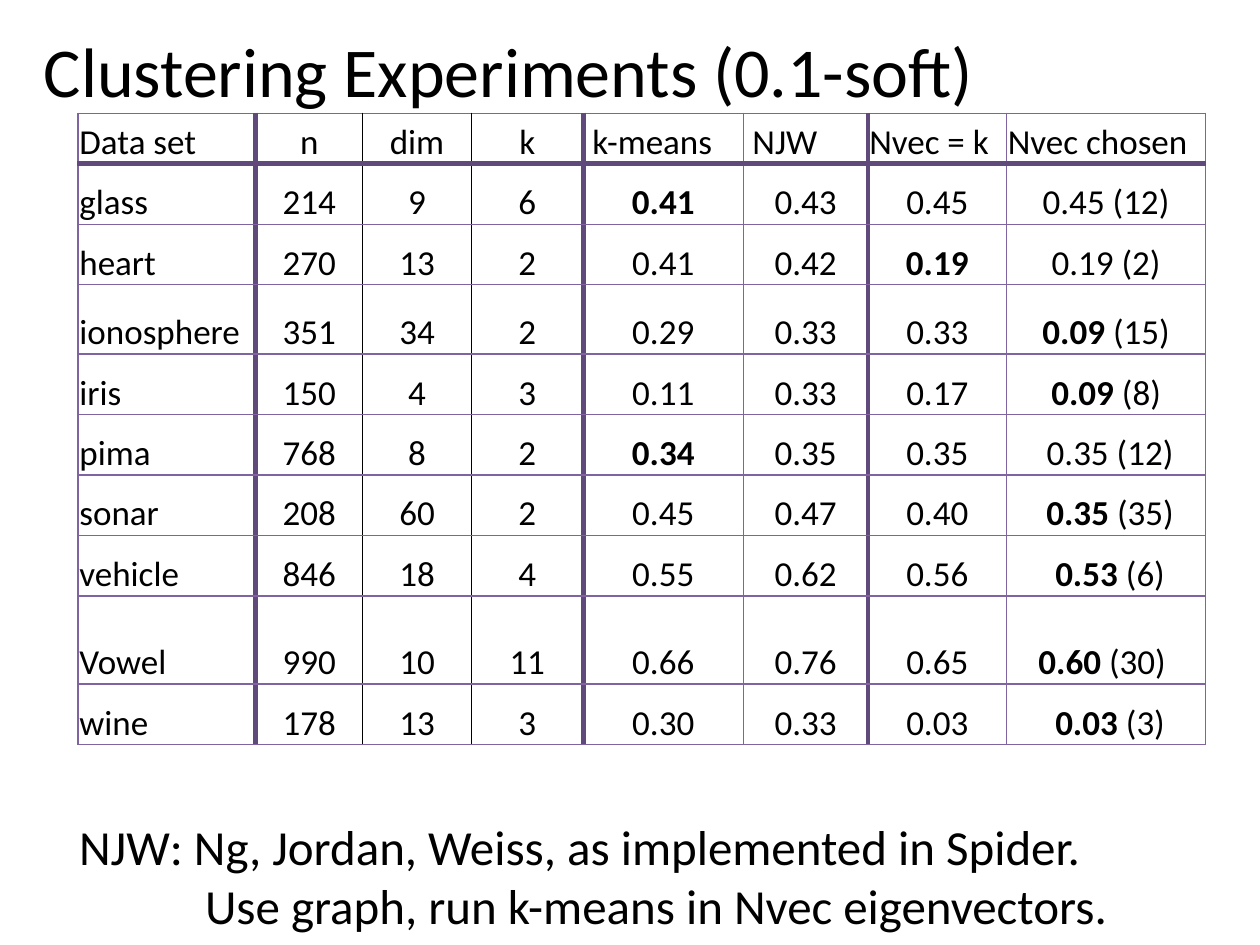
from lxml import etree
from pptx import Presentation
from pptx.dml.color import RGBColor
from pptx.enum.text import MSO_ANCHOR as Anchor, PP_ALIGN as Align
from pptx.oxml.ns import qn
from pptx.util import Inches, Pt

FONT = "Calibri"
COLORS = {"text": "000000", "purple": "8064A2", "dark purple": "604A7B"}
THIN, THICK, HAIR = ("purple", 1), ("dark purple", 3), ("text", 0.5)

COLUMN_WIDTHS = [1.41, 0.85, 0.86, 0.89, 1.27, 0.99, 1.1, 1.58]
ROW_HEIGHTS = [0.4, 0.48, 0.48, 0.55, 0.48, 0.48, 0.48, 0.48, 0.7, 0.48]
# Rules from the left edge to the right, and from the top edge to the bottom
VERTICAL_RULES = [THIN, THICK, HAIR, HAIR, THICK, THIN, THICK, THIN, THIN]
HORIZONTAL_RULES = [THIN, THICK] + [THIN] * 9

# Asterisks enclose bold text
RESULTS = [
    ["Data set", "n", "dim", "k", " k-means", " NJW", "Nvec = k", "Nvec chosen"],
    ["glass", "214", "9", "6", "*0.41*", "0.43", "0.45", "0.45 (12)"],
    ["heart", "270", "13", "2", "0.41", "0.42", "*0.19*", "0.19 (2)"],
    ["ionosphere", "351", "34", "2", "0.29", "0.33", "0.33", "* 0.09 *(15) "],
    ["iris", "150", "4", "3", "0.11", "0.33", "0.17", "*0.09* (8)"],
    ["pima", "768", "8", "2", "*0.34*", "0.35", "0.35", " 0.35 (12)"],
    ["sonar", "208", "60", "2", "0.45", "0.47", "0.40", "* 0.35 *(35)"],
    ["vehicle", "846", "18", "4", "0.55", "0.62", "0.56", " *0.53* (6)"],
    ["Vowel", "990", "10", "11", "0.66", "0.76", "0.65", "*0.60 *(30) "],
    ["wine", "178", "13", "3", "0.30", "0.33", "0.03", " *0.03* (3)"],
]


def set_font(paragraph, size):
    paragraph.font.name = FONT
    paragraph.font.size = Pt(size)
    paragraph.font.color.rgb = RGBColor.from_string(COLORS["text"])


def add_text(slide, left, top, width, height, lines, size):
    """Add a text box of (text, left indent in inches) lines."""
    box = slide.shapes.add_textbox(Inches(left), Inches(top), Inches(width), Inches(height))
    frame = box.text_frame
    frame.word_wrap = False
    for index, (text, indent) in enumerate(lines):
        paragraph = frame.add_paragraph() if index else frame.paragraphs[0]
        paragraph.text = text
        set_font(paragraph, size)
        if indent:
            paragraph._p.get_or_add_pPr().set("marL", str(Inches(indent)))


def add_border(cell, side, rule):
    color, width = rule
    line = etree.SubElement(cell._tc.get_or_add_tcPr(), qn(f"a:ln{side}"), w=str(Pt(width)))
    fill = etree.SubElement(line, qn("a:solidFill"))
    etree.SubElement(fill, qn("a:srgbClr"), val=COLORS[color])


def fill_cell(cell, text, centred):
    cell.vertical_anchor = Anchor.BOTTOM
    cell.margin_left = cell.margin_top = cell.margin_right = Inches(0.01)
    cell.margin_bottom = 0
    paragraph = cell.text_frame.paragraphs[0]
    paragraph.alignment = Align.CENTER if centred else Align.LEFT
    set_font(paragraph, 20)
    for index, part in enumerate(text.split("*")):
        if part:
            run = paragraph.add_run()
            run.text = part
            run.font.bold = index % 2 == 1


def add_results_table(slide):
    frame = slide.shapes.add_table(
        len(RESULTS), len(COLUMN_WIDTHS), Inches(0.62), Inches(0.9),
        Inches(sum(COLUMN_WIDTHS)), Inches(sum(ROW_HEIGHTS)))
    table = frame.table
    table.first_row = table.horz_banding = False
    for column, width in zip(table.columns, COLUMN_WIDTHS):
        column.width = Inches(width)
    for row, height in zip(table.rows, ROW_HEIGHTS):
        row.height = Inches(height)
    for r, values in enumerate(RESULTS):
        for c, text in enumerate(values):
            cell = table.cell(r, c)
            fill_cell(cell, text, centred=0 < c < 4 or (r > 0 and c > 0))
            add_border(cell, "L", VERTICAL_RULES[c])
            add_border(cell, "R", VERTICAL_RULES[c + 1])
            add_border(cell, "T", HORIZONTAL_RULES[r])
            add_border(cell, "B", HORIZONTAL_RULES[r + 1])
            cell.fill.background()


def main():
    presentation = Presentation()
    presentation.slide_width, presentation.slide_height = Inches(10), Inches(7.5)
    slide = presentation.slides.add_slide(presentation.slide_layouts[6])
    add_text(slide, 0.25, 0.17, 7.67, 0.77, [("Clustering Experiments (0.1-soft)", 0)], 40)
    add_results_table(slide)
    add_text(slide, 0.53, 6.43, 8.47, 1.04, [
        ("NJW: Ng, Jordan, Weiss, as implemented in Spider.", 0),
        ("Use graph, run k-means in Nvec eigenvectors.", 1),
    ], 28)
    presentation.save("out.pptx")


if __name__ == "__main__":
    main()
